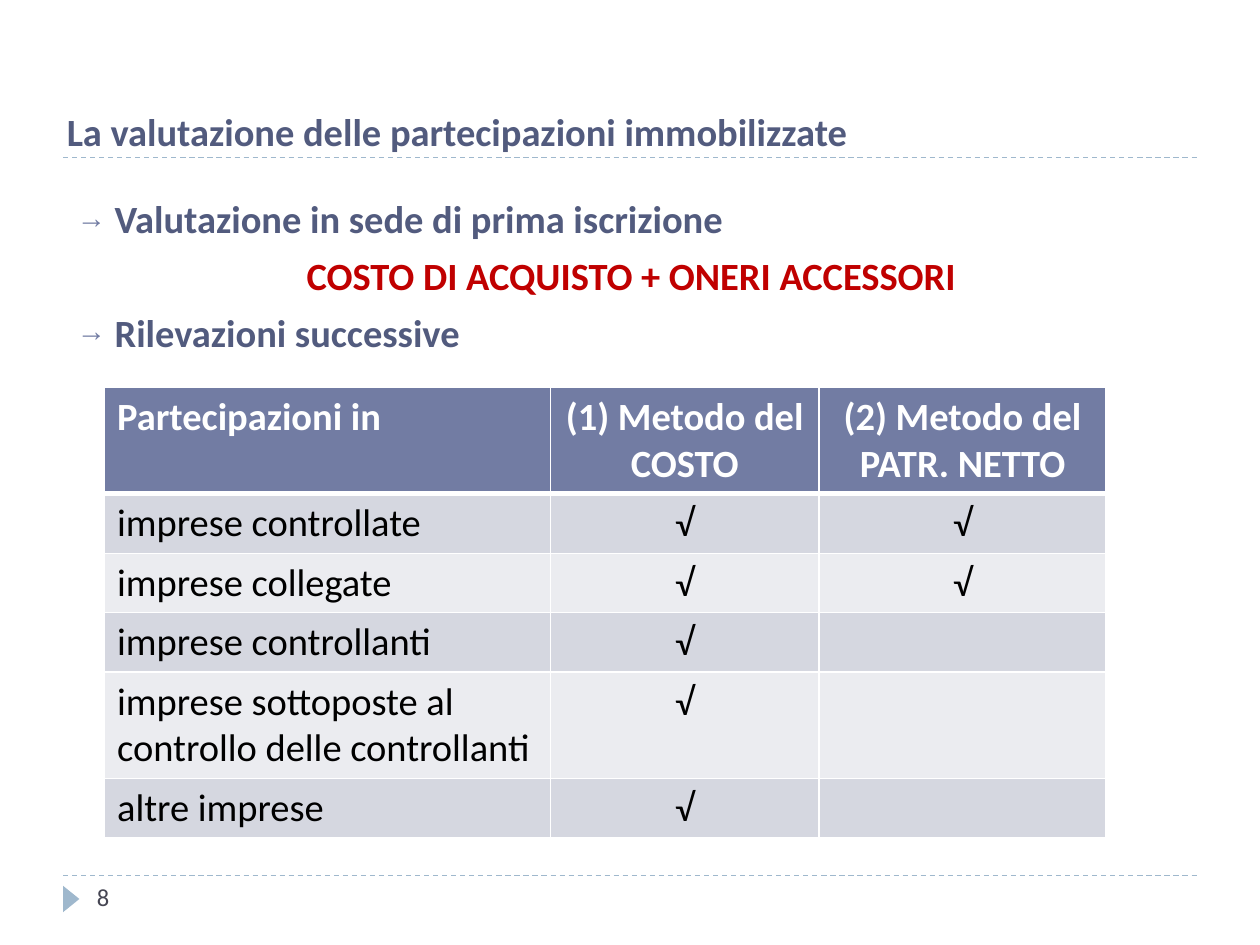
from dataclasses import dataclass

from lxml.etree import SubElement
from pptx import Presentation
from pptx.dml.color import RGBColor
from pptx.enum.dml import MSO_LINE
from pptx.enum.shapes import MSO_CONNECTOR, MSO_SHAPE
from pptx.enum.text import MSO_ANCHOR, MSO_AUTO_SIZE, PP_ALIGN
from pptx.oxml.ns import qn
from pptx.util import Inches, Pt


@dataclass(frozen=True)
class Theme:
    font: str = "Calibri"
    heading: str = "525B7E"
    accent: str = "727CA3"
    emphasis: str = "C00000"
    rule: str = "9FB8CD"
    number: str = "464653"
    text: str = "000000"
    light: str = "FFFFFF"
    bands: tuple = ("D5D7E0", "EBECF0")
    text_size: float = 22
    number_size: float = 14
    rule_width: float = 0.75
    bullet: str = "→"
    bullet_percent: int = 76


COLUMNS, ROWS = 100, 75
THEME = Theme()


def write(paragraph, text, *, size=THEME.text_size, color=THEME.text,
          bold=False, align=PP_ALIGN.LEFT, before=0):
    paragraph.alignment = align
    paragraph.space_before = Pt(before)
    run = paragraph.add_run()
    run.text = text
    run.font.name = THEME.font
    run.font.size = Pt(size)
    run.font.bold = bold
    run.font.color.rgb = RGBColor.from_string(color)


def set_bullet(paragraph, theme, shown):
    """Give the paragraph a hanging arrow, or clear the template's bullet."""
    properties = paragraph._p.get_or_add_pPr()
    indent = Inches(0.3) if shown else 0
    properties.set("marL", str(indent))
    properties.set("indent", str(-indent))
    if not shown:
        SubElement(properties, qn("a:buNone"))
        return
    color = SubElement(properties, qn("a:buClr"))
    SubElement(color, qn("a:srgbClr"), val=theme.accent)
    SubElement(properties, qn("a:buSzPct"), val=str(theme.bullet_percent * 1000))
    SubElement(properties, qn("a:buChar"), char=theme.bullet)


def set_borders(cell, color, bottom):
    """Draw one-point sides and a bottom edge of the given width."""
    properties = cell._tc.get_or_add_tcPr()
    for side, width in (("L", 1), ("R", 1), ("T", 1), ("B", bottom)):
        line = SubElement(properties, qn(f"a:ln{side}"), w=str(Pt(width)))
        fill = SubElement(line, qn("a:solidFill"))
        SubElement(fill, qn("a:srgbClr"), val=color)


class SlideBuilder:
    def __init__(self, presentation, theme):
        self.theme = theme
        self.column = presentation.slide_width / COLUMNS
        self.row = presentation.slide_height / ROWS
        self.slide = presentation.slides.add_slide(presentation.slide_layouts[1])

    def box(self, left, top, width, height):
        """Turn grid columns and rows into slide lengths."""
        return (round(left * self.column), round(top * self.row),
                round(width * self.column), round(height * self.row))

    def place(self, shape, *grid):
        shape.left, shape.top, shape.width, shape.height = self.box(*grid)
        frame = shape.text_frame
        frame.word_wrap = True
        frame.auto_size = MSO_AUTO_SIZE.NONE
        frame.vertical_anchor = MSO_ANCHOR.TOP
        return frame

    def title(self, text, *grid):
        frame = self.place(self.slide.shapes.title, *grid)
        write(frame.paragraphs[0], text, color=self.theme.heading, bold=True)

    def body(self, items, *grid):
        """Write (text, has_bullet) items; those without one are emphasised."""
        frame = self.place(self.slide.placeholders[1], *grid)
        for index, (text, has_bullet) in enumerate(items):
            paragraph = frame.add_paragraph() if index else frame.paragraphs[0]
            write(paragraph, text, bold=True, before=6,
                  color=self.theme.heading if has_bullet else self.theme.emphasis,
                  align=PP_ALIGN.JUSTIFY if has_bullet else PP_ALIGN.CENTER)
            set_bullet(paragraph, self.theme, has_bullet)

    def rule(self, left, top, width):
        x, y, length, _ = self.box(left, top, width, 0)
        line = self.slide.shapes.add_connector(
            MSO_CONNECTOR.STRAIGHT, x, y, x + length, y)
        line.line.color.rgb = RGBColor.from_string(self.theme.rule)
        line.line.width = Pt(self.theme.rule_width)
        line.line.dash_style = MSO_LINE.DASH
        SubElement(line._element.spPr, qn("a:effectLst"))

    def marker(self, *grid):
        shape = self.slide.shapes.add_shape(
            MSO_SHAPE.ISOSCELES_TRIANGLE, *self.box(*grid))
        shape.rotation = 90
        shape.shadow.inherit = False
        shape.fill.solid()
        shape.fill.fore_color.rgb = RGBColor.from_string(self.theme.rule)
        shape.line.fill.background()

    def page_number(self, text, *grid):
        frame = self.place(self.slide.shapes.add_textbox(*self.box(*grid)), *grid)
        write(frame.paragraphs[0], text, size=self.theme.number_size,
              color=self.theme.number)

    def table(self, records, left, top, widths, heights):
        table = self.slide.shapes.add_table(
            len(records), len(widths),
            *self.box(left, top, sum(widths), sum(heights))).table
        table.horz_banding = False
        for column, width in zip(table.columns, widths):
            column.width = round(width * self.column)
        for row, height in zip(table.rows, heights):
            row.height = round(height * self.row)
        for row_index, record in enumerate(records):
            for column_index, text in enumerate(record):
                self.cell(table.cell(row_index, column_index), text,
                          row_index, column_index)

    def cell(self, cell, text, row_index, column_index):
        header = row_index == 0
        fill = self.theme.accent if header else self.theme.bands[(row_index - 1) % 2]
        set_borders(cell, self.theme.light, bottom=3 if header else 1)
        cell.fill.solid()
        cell.fill.fore_color.rgb = RGBColor.from_string(fill)
        if text:
            write(cell.text_frame.paragraphs[0], text, bold=header,
                  color=self.theme.light if header else self.theme.text,
                  align=PP_ALIGN.CENTER if column_index else PP_ALIGN.LEFT)


def main():
    presentation = Presentation()
    presentation.slide_width, presentation.slide_height = Inches(10), Inches(7.5)
    builder = SlideBuilder(presentation, THEME)

    for top in (69.5, 12.5):
        builder.rule(5, top, 90)
    builder.marker(4.6, 70.7, 2.1, 1.3)
    builder.title("La valutazione delle partecipazioni immobilizzate",
                  4.3, 8.1, 94.5, 10.3)
    builder.body([
        ("Valutazione in sede di prima iscrizione", True),
        ("COSTO DI ACQUISTO + ONERI ACCESSORI", False),
        ("Rilevazioni successive", True),
    ], 5.1, 15, 90, 56.4)

    single, double = 4.66, 8.25
    builder.table([
        ("Partecipazioni in", "(1) Metodo del COSTO", "(2) Metodo del PATR. NETTO"),
        ("imprese controllate", "√", "√"),
        ("imprese collegate", "√", "√"),
        ("imprese controllanti", "√", ""),
        ("imprese sottoposte al controllo delle controllanti", "√", ""),
        ("altre imprese", "√", ""),
    ], 8.3, 30.75, widths=(35.4, 21.3, 22.8),
        heights=(double, single, single, single, double, single))
    builder.page_number("8", 6.7, 69.5, 21.7, 4)
    presentation.save("out.pptx")


if __name__ == "__main__":
    main()
